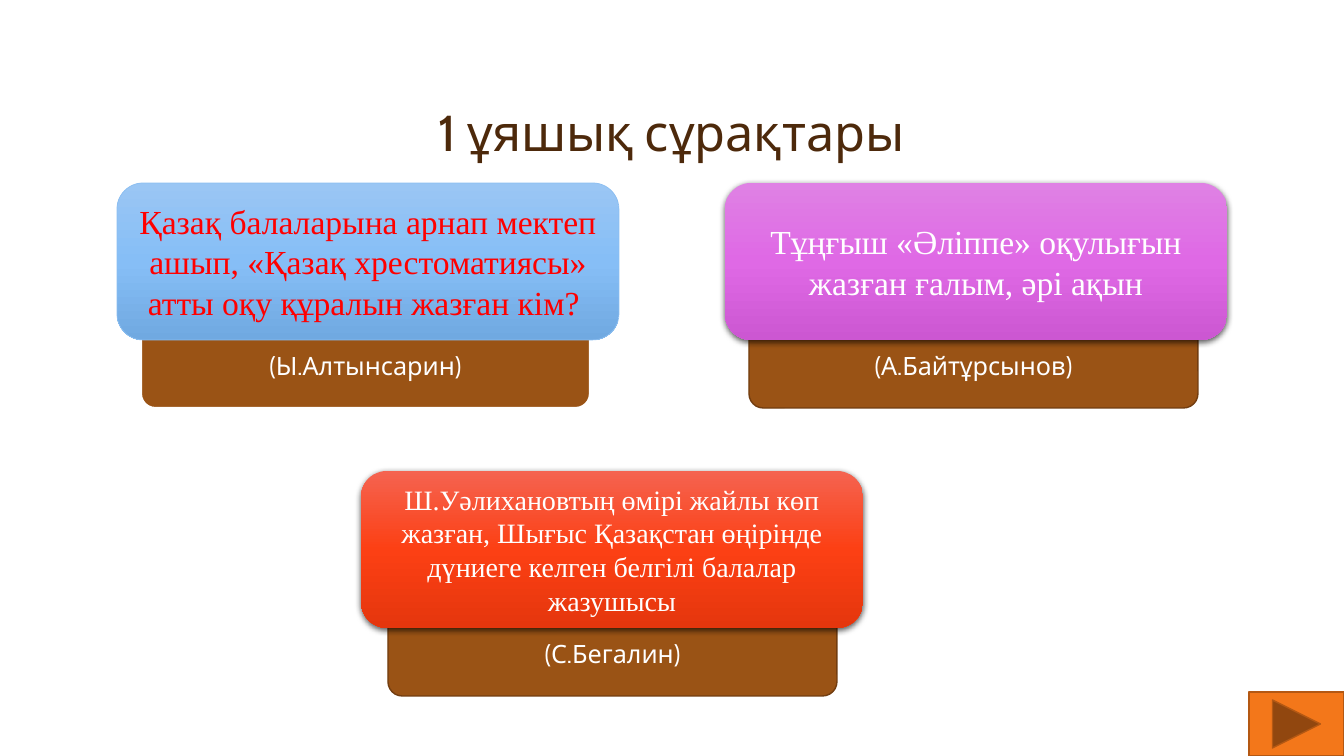
"""Build the slide with three quiz questions, each with its answer tab below."""
from copy import deepcopy

from lxml.etree import SubElement
from pptx import Presentation
from pptx.dml.color import RGBColor
from pptx.enum.shapes import MSO_SHAPE
from pptx.enum.text import MSO_ANCHOR, PP_ALIGN
from pptx.oxml.ns import qn
from pptx.util import Emu, Pt

PX = 914400 / 100.8


def color(hex_code):
    return RGBColor.from_string(hex_code)


def add_box(kind, box, text="", font="Cabin", size=18, ink="FFFFFF"):
    shape = slide.shapes.add_shape(kind, *[Emu(round(n * PX)) for n in box])
    shape.shadow.inherit = False
    if text:
        frame = shape.text_frame
        frame.word_wrap = True
        frame.vertical_anchor = MSO_ANCHOR.MIDDLE
        paragraph = frame.paragraphs[0]
        paragraph.alignment = PP_ALIGN.CENTER
        run = paragraph.add_run()
        run.text = text
        run.font.name, run.font.size = font, Pt(size)
        run.font.color.rgb = color(ink)
    return shape


presentation = Presentation()
presentation.slide_width = Emu(round(1344 * PX))
presentation.slide_height = Emu(round(756 * PX))
slide = presentation.slides.add_slide(presentation.slide_layouts[5])

title = slide.shapes.title
title.left, title.top, title.width, title.height = [
    Emu(round(n * PX)) for n in (117, 33, 1109, 134)]
title.text_frame.word_wrap = True
title.text_frame.vertical_anchor = MSO_ANCHOR.BOTTOM
heading = title.text_frame.paragraphs[0]
heading.alignment = PP_ALIGN.CENTER
heading.line_spacing = 0.9
heading_run = heading.add_run()
heading_run.text = "1 ұяшық сұрақтары"
heading_run.font.name, heading_run.font.size = "Cabin", Pt(36)
heading_run.font.color.rgb = color("4D290B")

cards = [
    (117, 183, 141, "Қазақ балаларына арнап мектеп ашып, «Қазақ хрестоматиясы» "
     "атты оқу құралын жазған кім? ", 24, "FF0000",
     ("9AC6F4", "86BEF6", "70A9E1"), "8BBEF1", "(Ы.Алтынсарин)", "FFFFFF", 1.5),
    (725, 183, 749, "Тұңғыш «Әліппе» оқулығын жазған ғалым, әрі ақын", 24, "FFFFFF",
     ("DF81E4", "DF69E5", "CC57D2"), None, "(А.Байтұрсынов)", "723D10", 1),
    (361, 471, 388, "Ш.Уәлихановтың өмірі жайлы көп жазған, Шығыс Қазақстан өңірінде "
     "дүниеге келген белгілі балалар жазушысы", 20, "FFFFFF",
     ("F56350", "FC4014", "E5360D"), None, "(С.Бегалин)", "723D10", 1),
]

for (left, top, answer_left, question_text, size, ink, shades, border,
     answer_text, answer_border, answer_border_width) in cards:
    answer = add_box(MSO_SHAPE.ROUNDED_RECTANGLE,
                     (answer_left, top + 139, 449, 86), answer_text)
    answer.fill.solid()
    answer.fill.fore_color.rgb = color("9A5315")
    answer.line.color.rgb = color(answer_border)
    answer.line.width = Pt(answer_border_width)

    question = add_box(MSO_SHAPE.ROUNDED_RECTANGLE, (left, top, 502, 157),
                       question_text, "Times New Roman", size, ink)
    question.fill.gradient()
    question.fill.gradient_angle = 270
    properties = question._element.spPr
    stop_list = properties.find(qn("a:gradFill")).find(qn("a:gsLst"))
    stop_list.append(deepcopy(stop_list[0]))
    for stop, position, shade in zip(question.fill.gradient_stops, (0, 0.5, 1), shades):
        stop.position = position
        stop.color.rgb = color(shade)
    if border:
        question.line.color.rgb = color(border)
        question.line.width = Pt(0.5)
    else:
        question.line.fill.background()
        shadow = SubElement(properties.find(qn("a:effectLst")), qn("a:outerShdw"),
                            blurRad=str(Pt(4.5)), dist=str(Pt(1.5)),
                            dir="5400000", algn="ctr", rotWithShape="0")
        shadow_color = SubElement(shadow, qn("a:srgbClr"), val="000000")
        SubElement(shadow_color, qn("a:alpha"), val="63000")

next_button = add_box(MSO_SHAPE.ACTION_BUTTON_FORWARD_OR_NEXT, (1249, 692, 95, 64))
next_button.fill.solid()
next_button.fill.fore_color.rgb = color("F3771A")
next_button.line.color.rgb = color("B45813")
next_button.line.width = Pt(1)

presentation.save("out.pptx")
